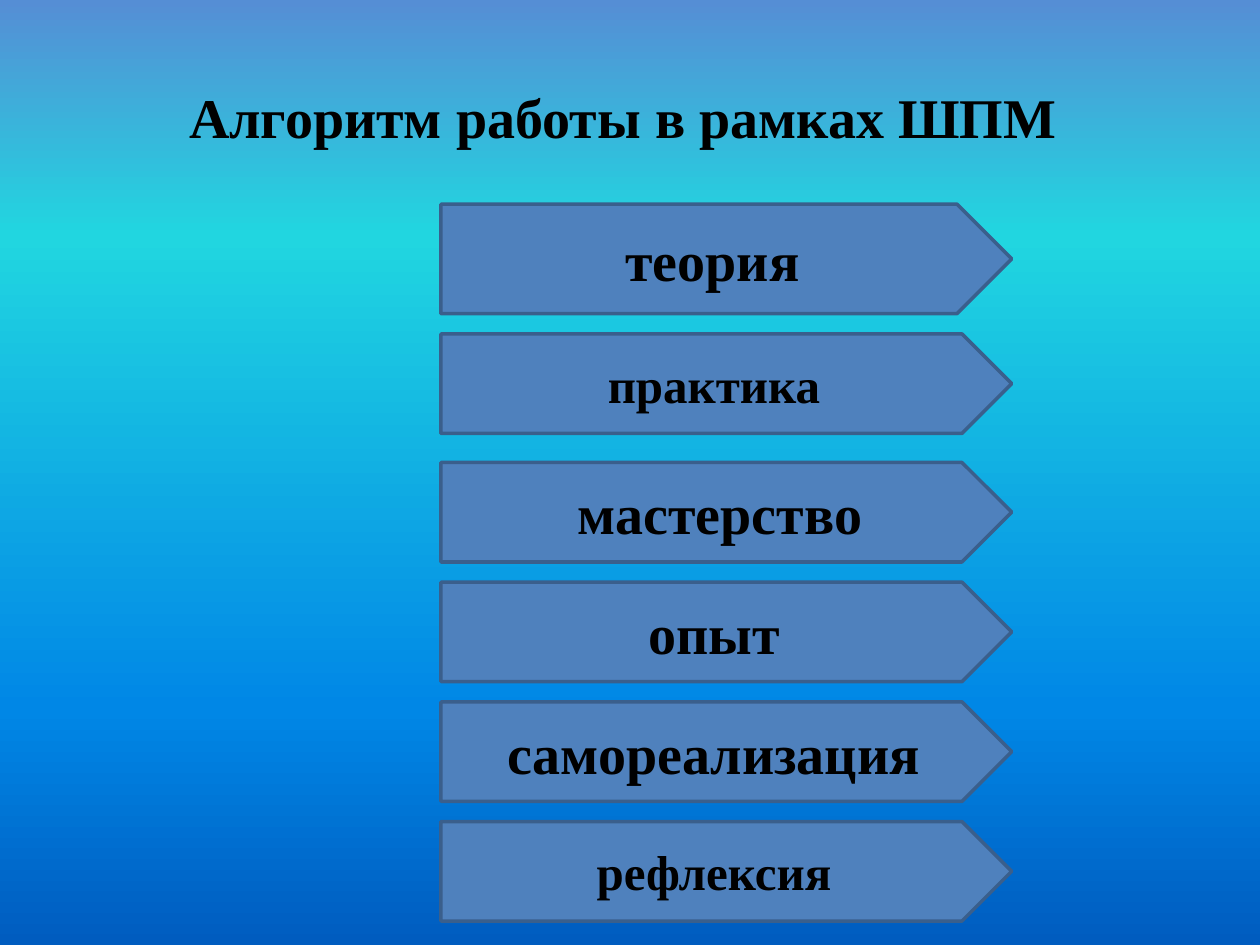
from copy import deepcopy

from pptx import Presentation
from pptx.dml.color import RGBColor
from pptx.enum import shapes, text
from pptx.util import Inches, Pt

BLACK = RGBColor(0x00, 0x00, 0x00)
ARROW_BLUE = RGBColor(0x4F, 0x81, 0xBD)
ARROW_EDGE = RGBColor(0x3A, 0x5F, 0x8C)
SKY = [
    (0, RGBColor(0x55, 0x8E, 0xD5)),
    (0.25, RGBColor(0x21, 0xD6, 0xE0)),
    (0.75, RGBColor(0x00, 0x87, 0xE6)),
    (1, RGBColor(0x00, 0x5C, 0xBF)),
]
FONT = "Times New Roman"
GAP, WIDE_GAP = 0.16, 0.23
TALL, LOW = 0.87, 0.79

STAGES = [
    ([("теория", 32)], TALL, GAP),
    ([("практика", 28)], LOW, WIDE_GAP),
    ([(" ", 28), ("мастерство", 32)], LOW, GAP),
    ([("опыт", 32)], LOW, GAP),
    ([("самореализация", 32)], LOW, GAP),
    ([("рефлексия", 28)], LOW, GAP),
]


def paint_background(slide):
    """Fill the slide with a four-colour gradient running downwards."""
    fill = slide.background.fill
    fill.gradient()
    fill.gradient_angle = 270
    stop_list = slide.element.xpath(".//a:gsLst")[0]
    while len(stop_list) < len(SKY):
        stop_list.append(deepcopy(stop_list[0]))
    for stop, (position, color) in zip(fill.gradient_stops, SKY):
        stop.position = position
        stop.color.rgb = color


def write_centred(frame, runs):
    """Write bold black runs in the middle of a text frame."""
    frame.word_wrap = True
    frame.vertical_anchor = text.MSO_ANCHOR.MIDDLE
    paragraph = frame.paragraphs[0]
    paragraph.alignment = text.PP_ALIGN.CENTER
    for words, size in runs:
        run = paragraph.add_run()
        run.text = words
        run.font.name = FONT
        run.font.size = Pt(size)
        run.font.bold = True
        run.font.color.rgb = BLACK


def place_title(slide, left, top, width, height):
    """Place the heading in the title placeholder."""
    title = slide.shapes.title
    title.left, title.top = Inches(left), Inches(top)
    title.width, title.height = Inches(width), Inches(height)
    write_centred(title.text_frame, [("Алгоритм работы в рамках ШПМ ", 32)])


def place_stages(slide, left, top, width):
    """Stack the stage arrows downwards from the given corner."""
    for runs, height, gap in STAGES:
        stage = slide.shapes.add_shape(
            shapes.MSO_SHAPE.PENTAGON,
            Inches(left), Inches(top), Inches(width), Inches(height),
        )
        stage.shadow.inherit = False
        stage.fill.solid()
        stage.fill.fore_color.rgb = ARROW_BLUE
        stage.line.color.rgb = ARROW_EDGE
        stage.line.width = Pt(2)
        write_centred(stage.text_frame, runs)
        top += height + gap


def main():
    """Build the slide and save it."""
    deck = Presentation()
    deck.slide_width, deck.slide_height = Inches(10), Inches(7.5)
    slide = deck.slides.add_slide(deck.slide_layouts.get_by_name("Title Only"))
    paint_background(slide)
    place_title(slide, 0.5, 0.3, 9, 1.25)
    place_stages(slide, 3.5, 1.62, 4.53)
    deck.save("out.pptx")


if __name__ == "__main__":
    main()
